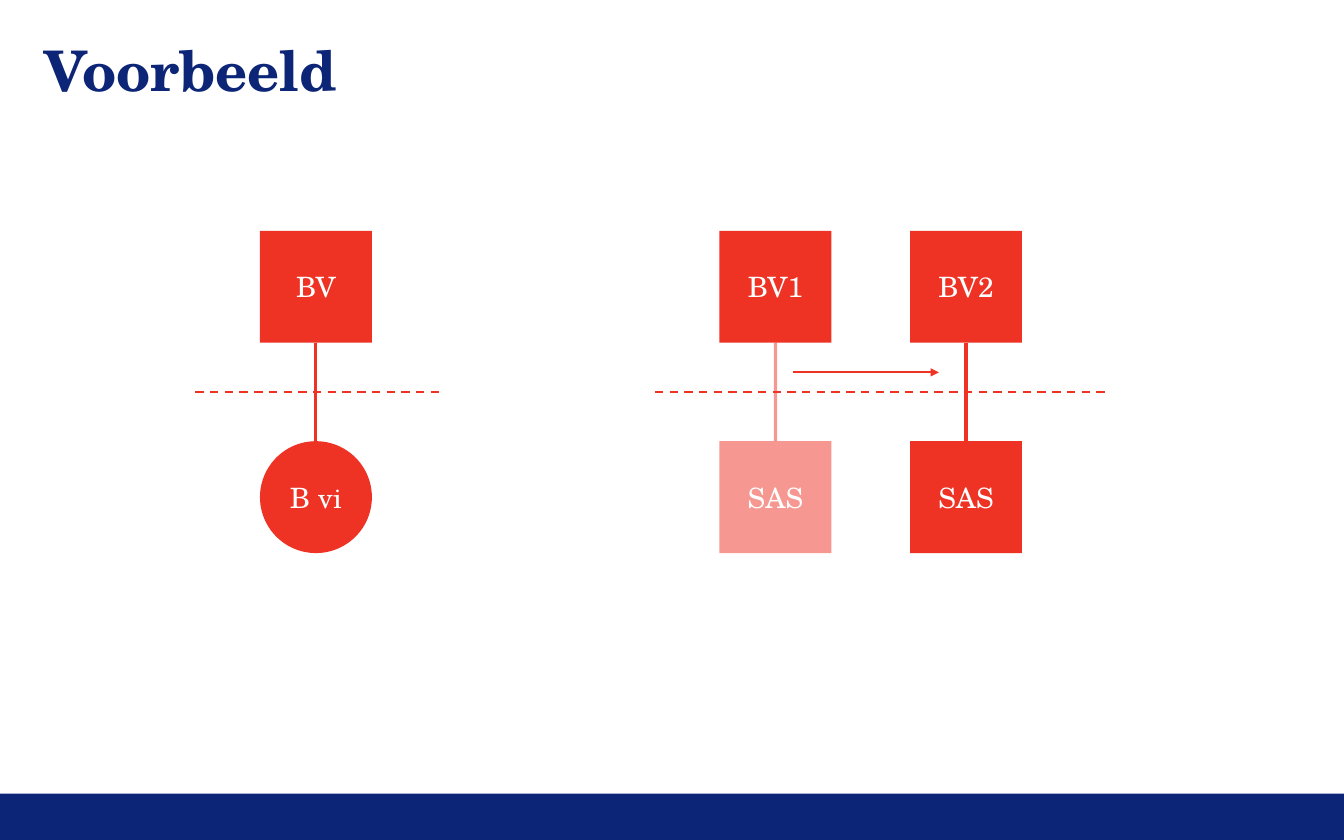
from dataclasses import dataclass

from lxml.etree import SubElement
from pptx import Presentation
from pptx.dml.color import RGBColor
from pptx.enum.dml import MSO_LINE
from pptx.enum.shapes import MSO_CONNECTOR, MSO_SHAPE
from pptx.enum.text import MSO_ANCHOR, MSO_AUTO_SIZE, PP_ALIGN
from pptx.oxml.ns import qn
from pptx.util import Pt


@dataclass(frozen=True)
class Theme:
    navy: RGBColor = RGBColor(0x0C, 0x25, 0x77)
    red: RGBColor = RGBColor(0xEE, 0x32, 0x24)
    white: RGBColor = RGBColor(0xFF, 0xFF, 0xFF)
    face: str = "TeX Gyre Schola"
    head: float = 40
    label: float = 20
    thick: float = 2.25
    thin: float = 1.5


THEME = Theme()
WIDE, HIGH = 960.5, 600.5
SIDE = 80     # edge of a node
INSET = 46.2  # dashed line start to first node
STEP = 136.2  # from one column to the next
GAP = 70.4    # between upper and lower node


def apply(target, values):
    for name, value in values.items():
        setattr(target, name, value)


def write(frame, text, size, color, align, bold=False):
    apply(frame, {"text": text, "word_wrap": True,
                  "auto_size": MSO_AUTO_SIZE.NONE,
                  "vertical_anchor": MSO_ANCHOR.MIDDLE})
    line = frame.paragraphs[0]
    line.alignment = align
    font = line.runs[0].font
    apply(font, {"name": THEME.face, "size": Pt(size), "bold": bold})
    font.color.rgb = color


def fade(shape):
    """Make the shape's own colours half transparent."""
    for color in shape._element.spPr.iter(qn("a:srgbClr")):
        SubElement(color, qn("a:alpha"), val="50000")


def block(slide, kind, box, color):
    shape = slide.shapes.add_shape(kind, *map(Pt, box))
    shape.shadow.inherit = False
    shape.fill.solid()
    shape.fill.fore_color.rgb = color
    shape.line.fill.background()
    return shape


def node(slide, x, y, text, kind=MSO_SHAPE.RECTANGLE):
    shape = block(slide, kind, (x, y, SIDE, SIDE), THEME.red)
    write(shape.text_frame, text, THEME.label, THEME.white, PP_ALIGN.CENTER)
    return shape


def link(slide, x1, y1, x2, y2, width, dash=None):
    line = slide.shapes.add_connector(
        MSO_CONNECTOR.STRAIGHT, *map(Pt, (x1, y1, x2, y2)))
    line.line.color.rgb = THEME.red
    apply(line.line, {"width": Pt(width), "dash_style": dash})
    SubElement(line._element.spPr, qn("a:effectLst"))
    return line


def title(slide, box, text):
    shape = slide.shapes.title
    apply(shape, dict(zip(("left", "top", "width", "height"), map(Pt, box))))
    sides = ("left", "top", "right", "bottom")
    apply(shape.text_frame, {f"margin_{side}": 0 for side in sides})
    write(shape.text_frame, text, THEME.head, THEME.navy, PP_ALIGN.LEFT, True)


def footer(slide, box):
    block(slide, MSO_SHAPE.RECTANGLE, box, THEME.navy)


def chart(slide, box, pairs):
    """Columns of linked nodes, with a dashed border across the middle."""
    x, y, width, height = box
    low = y + SIDE + GAP
    mid = y + height / 2
    for col, (upper, lower, kind, faint) in enumerate(pairs):
        left = x + INSET + col * STEP
        top = node(slide, left, y, upper)
        base = node(slide, left, low, lower, kind)
        axis = left + SIDE / 2
        stem = link(slide, axis, y + SIDE, axis, low, THEME.thick)
        stem.begin_connect(top, 2)
        stem.end_connect(base, 0)
        if faint:
            fade(base)
            fade(stem)
    link(slide, x, mid, x + width, mid, THEME.thin, MSO_LINE.DASH)


def arrow(slide, box):
    x, y, width, _ = box
    line = link(slide, x, y, x + width, y, THEME.thin)
    SubElement(line.line._get_or_add_ln(), qn("a:tailEnd"), type="triangle")


def main():
    deck = Presentation()
    apply(deck, {"slide_width": Pt(WIDE), "slide_height": Pt(HIGH)})
    slide = deck.slides.add_slide(deck.slide_layouts[5])

    # Frame of the slide
    footer(slide, (0, 567.4, WIDE, HIGH - 567.4))
    title(slide, (31.7, 31.7, 897, 35.3), "Voorbeeld")

    # Before and after the move
    square, round_ = MSO_SHAPE.RECTANGLE, MSO_SHAPE.OVAL
    tall = 2 * SIDE + GAP
    chart(slide, (139.6, 165, 175.6, tall), [("BV", "B vi", round_, False)])
    chart(slide, (468, 165, 324, tall), [("BV1", "SAS", square, True),
                                         ("BV2", "SAS", square, False)])
    arrow(slide, (566.6, 266.2, 104.4, 0))

    deck.save("out.pptx")


if __name__ == "__main__":
    main()
